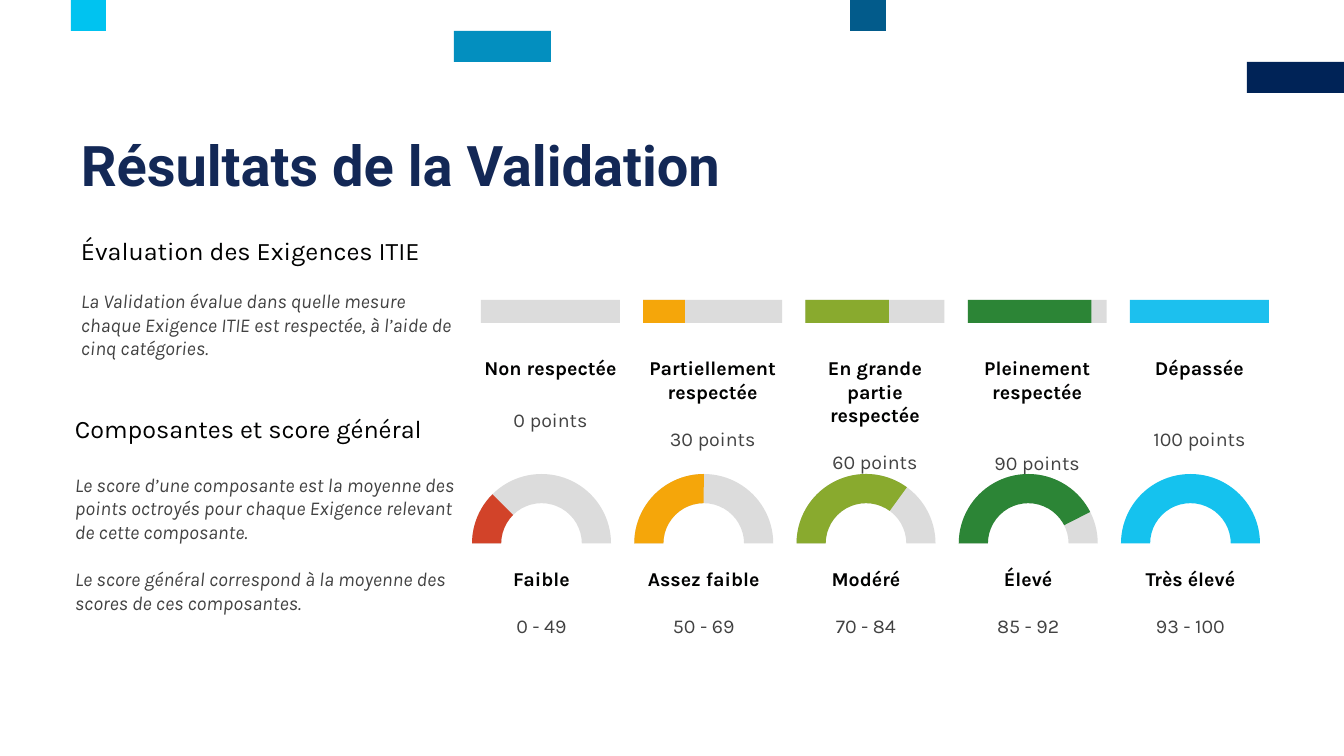
from pptx import Presentation
from pptx.dml.color import RGBColor
from pptx.enum.shapes import MSO_SHAPE as Form
from pptx.enum.text import MSO_ANCHOR as Anchor, PP_ALIGN as Align
from pptx.util import Pt

WIDE, HIGH = 1344, 756
SCALE = 12192000 / WIDE
COL = {
    "navy": "002357", "deep": "025B8B", "mid": "038FBF", "cyan": "00C3F0",
    "title": "132856", "ink": "000100", "gray": "424242", "track": "DCDCDC",
    "red": "D24329", "amber": "F5A60A", "lime": "89AA2E", "green": "2C8536",
    "sky": "1CC0EE", "azure": "15C2EE",
}
BLOCKS = [
    (1247, 62, 97, "navy"), (850, 0, 36, "deep"),
    (454, 31, 97, "mid"), (71, 0, 35, "cyan"),
]
# label, score, share filled, colour, gap above the score in points
RATINGS = [
    ("Non respectée", "0 points", 0, "track", 20),
    ("Partiellement respectée", "30 points", 0.3, "amber", 17),
    ("En grande partie respectée", "60 points", 0.6, "lime", 17),
    ("Pleinement respectée", "90 points", 0.89, "green", 34),
    ("Dépassée", "100 points", 1, "sky", 34),
]
GRADES = [
    ("Faible", "0 - 49", 0.25, "red", 17),
    ("Assez faible", "50 - 69", 0.5, "amber", 17),
    ("Modéré", "70 - 84", 0.7, "lime", 17),
    ("Élevé", "85 - 92", 0.85, "green", 17),
    ("Très élevé", "93 - 100", 1, "azure", 17),
]
INTRO = [
    ("Évaluation des Exigences ITIE", 0),
    ("La Validation évalue dans quelle mesure chaque Exigence ITIE est "
     "respectée, à l’aide de cinq catégories.", 17),
]
SCORE = [
    ("Composantes et score général", 0),
    ("Le score d’une composante est la moyenne des points octroyés pour "
     "chaque Exigence relevant de cette composante.", 21),
    ("Le score général correspond à la moyenne des scores de ces "
     "composantes.", 17),
]


def px(*sizes):
    return [round(size * SCALE) for size in sizes]


def draw(shapes, form, box, color):
    shape = shapes.add_shape(form, *px(*box))
    shape.shadow.inherit = False
    shape.fill.solid()
    shape.fill.fore_color.rgb = RGBColor.from_string(COL[color])
    shape.line.fill.background()
    return shape


def write(shapes, box, lines, align=Align.LEFT, face="Karla"):
    """Add a text box; each line is text, size, colour, bold, italic, gap."""
    frame = shapes.add_textbox(*px(*box)).text_frame
    frame.word_wrap = True
    frame.text = "\n".join(line[0] for line in lines)
    for para, (_, size, color, bold, slant, gap) in zip(frame.paragraphs, lines):
        para.alignment = align
        if gap:
            para.space_before = Pt(gap)
        font = para.runs[0].font
        font.name, font.size = face, Pt(size)
        font.bold, font.italic = bold, slant
        font.color.rgb = RGBColor.from_string(COL[color])
    return frame


def add_title(shapes, box):
    line = ("Résultats de la Validation", 40, "title", True, False, 0)
    frame = write(shapes, box, [line], face="Roboto")
    frame.vertical_anchor = Anchor.MIDDLE
    frame.paragraphs[0].line_spacing = 0.89


def add_notes(shapes, box, items):
    """Place a heading with its italic paragraphs below."""
    (head, _), *body = items
    lines = [(head, 18, "ink", False, False, 0)]
    lines += [(text, 14, "gray", False, True, gap) for text, gap in body]
    write(shapes, box, lines)


def draw_bar(shapes, box, share, color):
    left, top, width, height = box
    if share < 1:
        draw(shapes, Form.RECTANGLE, box, "track")
    if share:
        draw(shapes, Form.RECTANGLE, (left, top, width * share, height), color)


def draw_gauge(shapes, box, share, color):
    parts = [(1, color)] if share == 1 else [(1, "track"), (share, color)]
    for part, tint in parts:
        arc = draw(shapes, Form.BLOCK_ARC, box, tint)
        # 108 is half a turn: the arc starts at the left and runs clockwise
        arc.adjustments[0] = 108
        arc.adjustments[1] = 108 * (1 + part) % 216
        arc.adjustments[2] = 0.21


def add_scale(shapes, box, levels, mark, size, drop, room):
    """Spread the marks over the box, with labels of width room below."""
    left, top, width, height = box
    wide, tall = size
    step = (width - wide) / (len(levels) - 1)
    group = shapes.add_group_shape().shapes
    for i, (label, score, share, color, gap) in enumerate(levels):
        x = left + i * step
        mark(group, (x, top, wide, tall), share, color)
        write(group, (x + (wide - room) / 2, top + drop, room, height - drop),
              [(label, 14, "ink", True, False, 0),
               (score, 14, "gray", False, False, gap)], Align.CENTER)


def main():
    deck = Presentation()
    deck.slide_width, deck.slide_height = px(WIDE, HIGH)
    shapes = deck.slides.add_slide(deck.slide_layouts[6]).shapes
    for left, top, width, color in BLOCKS:
        draw(shapes, Form.RECTANGLE, (left, top, width, 31), color)
    add_title(shapes, (71, 132, 1203, 74))
    add_scale(shapes, (481, 300, 788, 156), RATINGS, draw_bar, (139, 23), 51, 162)
    add_notes(shapes, (71, 230, 403, 136), INTRO)
    add_notes(shapes, (65, 408, 401, 213), SCORE)
    add_scale(shapes, (472, 474, 788, 169), GRADES, draw_gauge, (139, 139), 88, 150)
    deck.save("out.pptx")


if __name__ == "__main__":
    main()
